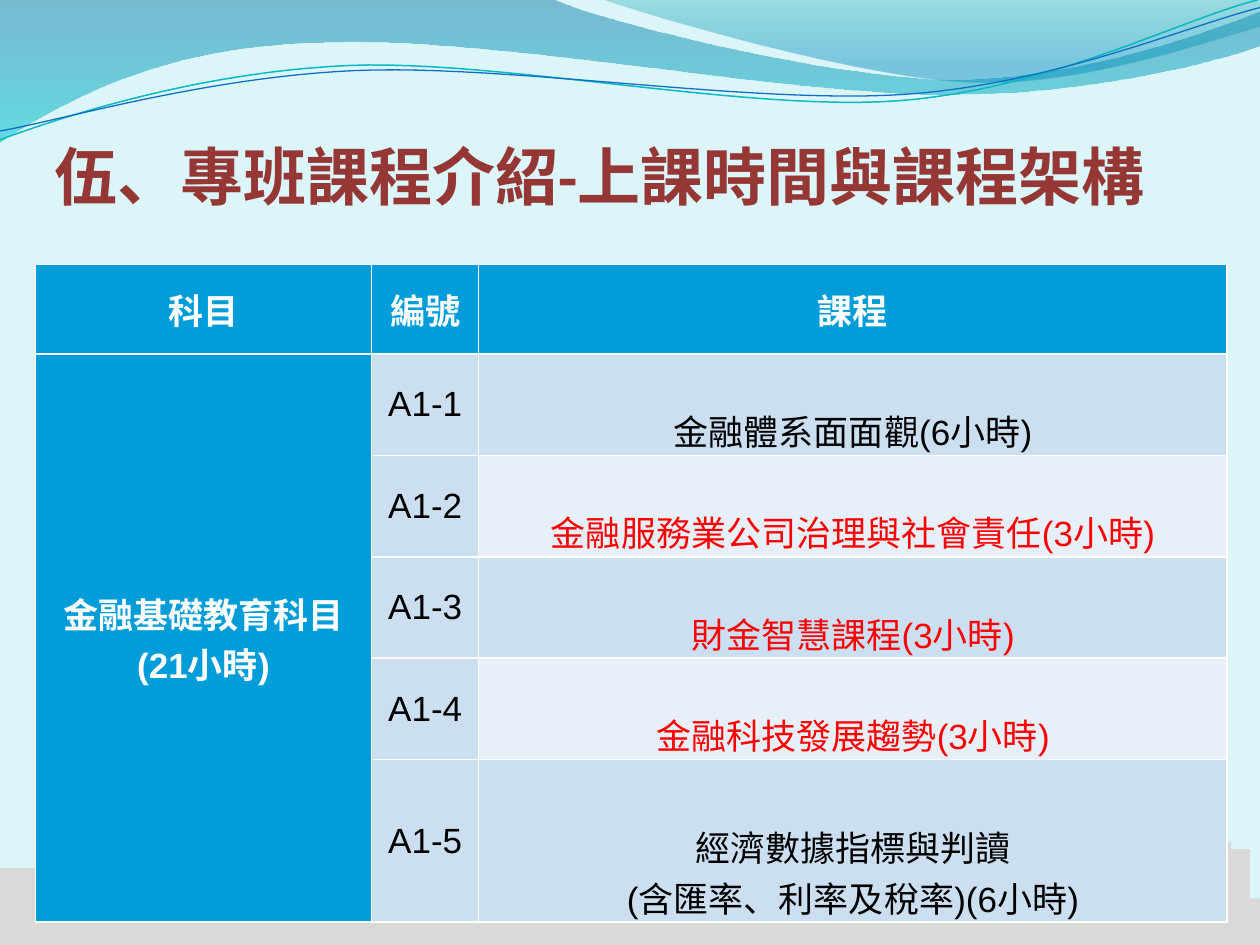
from pptx import Presentation
from pptx.dml.color import RGBColor as Rgb
from pptx.enum.text import MSO_ANCHOR as Anchor, MSO_AUTO_SIZE as Fit, PP_ALIGN as Align
from pptx.oxml.ns import qn
from pptx.util import Inches, Pt
from lxml.etree import SubElement as Sub

PALE = Rgb(0xDB, 0xF5, 0xF9)
DEEP = Rgb(0x00, 0x74, 0xA1)
AQUA = Rgb(0x00, 0xC6, 0xCF)
TEAL = Rgb(0x00, 0xA1, 0xA9)
SKY = Rgb(0x00, 0x8B, 0xBF)
CYAN = Rgb(0x0A, 0xB8, 0xBF)
BLUE = Rgb(0x0F, 0x6F, 0xC6)
GRAY = Rgb(0xD9, 0xD9, 0xD9)
BRICK = Rgb(0x95, 0x37, 0x35)
HEAD = Rgb(0x00, 0x9D, 0xD9)
BAND = Rgb(0xCC, 0xDF, 0xF1)
LIGHT = Rgb(0xE7, 0xEF, 0xF8)
WHITE = Rgb(0xFF, 0xFF, 0xFF)
BLACK = Rgb(0x00, 0x00, 0x00)
RED = Rgb(0xFF, 0x00, 0x00)

COLS, ROWS = 100, 75
STEPS = 24

BACK = [(0, 0), [(44, 0)],
        [(47.6, 1.7), (66.4, 6.3), (75.8, 6.3)],
        [(85.3, 6.3), (95.8, 2.6), (100, 0.9)], [(100, 3.6)],
        [(98.3, 4.4), (87, 7.6), (74.6, 7.5)],
        [(62.2, 7.5), (38.2, 2.8), (25.7, 3.4)],
        [(12.9, 3.5), (4.6, 8.3), (0, 11.3)]]
FRONT = [(47.9, 0),
         [(50.9, 1.1), (68.2, 6.2), (76.9, 6.5)],
         [(85.6, 6.9), (96.1, 3.2), (100, 2.1)], [(100, 0)]]
UPPER = [(0, 11.1),
         [(4.8, 9.3), (15.8, 5.7), (27.7, 5.2)],
         [(39.5, 4.7), (59.3, 8.9), (71.3, 8)],
         [(83.3, 7.1), (93.8, 1.5), (99.8, 0)]]
LOWER = [(0, 10.4),
         [(4.7, 9.6), (16.4, 6.1), (28.3, 5.6)],
         [(40.3, 5.1), (59.7, 8.3), (71.7, 7.5)],
         [(83.6, 6.7), (94.1, 2.1), (100, 0.6)]]
ROOFS = [(0, 68.9), (4.4, 71.3), (5.1, 69.7), (6.4, 71.9), (7.7, 71.7),
         (11.2, 71.2), (14, 71.1), (14.7, 73), (17.8, 72.3), (18.9, 69.1),
         (19.7, 67.5), (21.3, 68.1), (22.1, 71.8), (23.9, 70.9),
         (24.6, 66), (26.1, 66.8), (28.2, 69.2), (30.3, 66.8),
         (34.4, 69.3), (39.8, 68), (40.9, 65.2), (42.9, 67.9),
         (44.6, 61.7), (46.2, 60.3), (47.8, 61.2), (49.8, 71),
         (55.8, 68.7), (59, 61.5), (63.7, 68.7), (68.2, 64.8),
         (70.5, 68.9), (75.4, 71.3), (76.1, 69.7), (78.1, 71.7),
         (82.2, 71.2), (85.7, 73), (88.8, 72.3), (89.9, 69.1),
         (90.7, 67.5), (92.3, 68.1), (93.1, 71.8), (94.9, 70.9),
         (95.5, 67.6), (95.7, 66), (97.2, 66.8), (97.7, 67.4),
         (99.2, 71.3), (100, 71.7)]

TOPICS = [("金融體系面面觀(6小時)", BLACK),
          ("金融服務業公司治理與社會責任(3小時)", RED),
          ("財金智慧課程(3小時)", RED),
          ("金融科技發展趨勢(3小時)", RED),
          ("經濟數據指標與判讀\n(含匯率、利率及稅率)(6小時)", BLACK)]


def curve(start, legs):
    """Return the points of a chain of straight and cubic legs."""
    dots = [start]
    for leg in legs:
        if len(leg) == 1:
            dots += leg
            continue
        ends = [dots[-1], *leg]
        for step in range(1, STEPS + 1):
            t = step / STEPS
            load = ((1 - t) ** 3, 3 * t * (1 - t) ** 2, 3 * t * t * (1 - t), t ** 3)
            dots.append(tuple(sum(w * p[axis] for w, p in zip(load, ends))
                              for axis in (0, 1)))
    return dots


def steps(roofs):
    """Return the outline of a skyline given as roof starts and heights."""
    dots = [(0, ROWS)]
    for x, y in roofs:
        dots += [(x, dots[-1][1]), (x, y)]
    return dots + [(COLS, ROWS)]


class Deck:
    """Hold the style and the current slide."""

    def __init__(self):
        """Open a blank slide with a title."""
        self.show = Presentation()
        self.show.slide_width, self.show.slide_height = Inches(10), Inches(7.5)
        self.slide = self.show.slides.add_slide(self.show.slide_layouts[5])
        back = self.slide.background.fill
        back.solid()
        back.fore_color.rgb = PALE

    def at(self, *cells):
        """Turn grid cells into lengths."""
        return [round(cell * self.show.slide_width / COLS) for cell in cells]

    def style(self, frame, font, size, color, bold, align):
        """Format every run of a text frame."""
        for para in frame.paragraphs:
            para.alignment = align
            for run in para.runs:
                face = run.font
                face.name, face.size, face.bold = font, Pt(size), bold
                face.color.rgb = color

    def shape(self, dots, close=True):
        """Draw an outline through grid points."""
        first, *rest = [self.at(*dot) for dot in dots]
        pen = self.slide.shapes.build_freeform(*first)
        pen.add_line_segments(rest, close=close)
        form = pen.convert_to_shape()
        form.shadow.inherit = False
        return form

    def wave(self, path, stops):
        """Fill a wave with a clear gradient from top to bottom."""
        form = self.shape(curve(path[0], path[1:]))
        form.line.fill.background()
        form.fill.gradient()
        form.fill.gradient_angle = 270
        for stop, (place, color, alpha) in zip(form.fill.gradient_stops, stops):
            stop.position, stop.color.rgb = place, color
        tints = form.fill._xPr.iter(qn("a:srgbClr"))
        for tint, (place, color, alpha) in zip(tints, stops):
            Sub(tint, qn("a:alpha")).set("val", str(alpha * 1000))

    def thread(self, path, color, width):
        """Draw a thin curved line."""
        form = self.shape(curve(path[0], path[1:]), close=False)
        form.fill.background()
        form.line.color.rgb, form.line.width = color, Pt(width)

    def city(self, roofs, color):
        """Fill a skyline."""
        form = self.shape(steps(roofs))
        form.fill.solid()
        form.fill.fore_color.rgb = color
        form.line.fill.background()

    def title(self, text, box):
        """Place and format the title."""
        head = self.slide.shapes.title
        head.left, head.top, head.width, head.height = self.at(*box)
        frame = head.text_frame
        frame.text = text
        frame.auto_size, frame.vertical_anchor = Fit.NONE, Anchor.BOTTOM
        frame.margin_left = frame.margin_right = frame.margin_bottom = 0
        self.style(frame, "Calibri", 36, BRICK, True, Align.LEFT)

    def cell(self, cell, text, fill, color=WHITE, bold=True, anchor=Anchor.MIDDLE):
        """Fill and format one table cell."""
        cell.text_frame.text = text
        cell.vertical_anchor = anchor
        cell.margin_left = cell.margin_right = self.at(0.7)[0]
        cell.margin_top = cell.margin_bottom = 0
        cell.fill.solid()
        cell.fill.fore_color.rgb = fill
        self.style(cell.text_frame, "Arial", 20, color, bold, Align.CENTER)

    def table(self, left, top, cols, rows):
        """Add the course table."""
        box = self.at(left, top, sum(cols), sum(rows))
        grid = self.slide.shapes.add_table(len(rows), len(cols), *box).table
        for col, width in zip(grid.columns, self.at(*cols)):
            col.width = width
        for row, height in zip(grid.rows, self.at(*rows)):
            row.height = height
        for num, text in enumerate(("科目", "編號", "課程")):
            self.cell(grid.cell(0, num), text, HEAD)
        grid.cell(1, 0).merge(grid.cell(len(TOPICS), 0))
        self.cell(grid.cell(1, 0), "金融基礎教育科目\n(21小時)", HEAD)
        for num, (text, color) in enumerate(TOPICS, 1):
            self.cell(grid.cell(num, 1), f"A1-{num}", BAND, BLACK, False)
            self.cell(grid.cell(num, 2), text, BAND if num % 2 else LIGHT,
                      color, False, Anchor.BOTTOM)


def main():
    """Build and save the slide."""
    deck = Deck()
    deck.wave(BACK, [(0, DEEP, 45), (1, AQUA, 55)])
    deck.wave(FRONT, [(0, TEAL, 30), (0.8, SKY, 45)])
    deck.thread(UPPER, CYAN, 0.85)
    deck.thread(LOWER, BLUE, 0.75)
    deck.city(ROOFS, GRAY)
    deck.title("伍、專班課程介紹-上課時間與課程架構", (4.3, 4.4, 90, 12.5))
    deck.table(2.8, 21, (26.7, 8.5, 59.4), (7.1, *[8.05] * 4, 12.9))
    deck.show.save("out.pptx")


if __name__ == "__main__":
    main()
